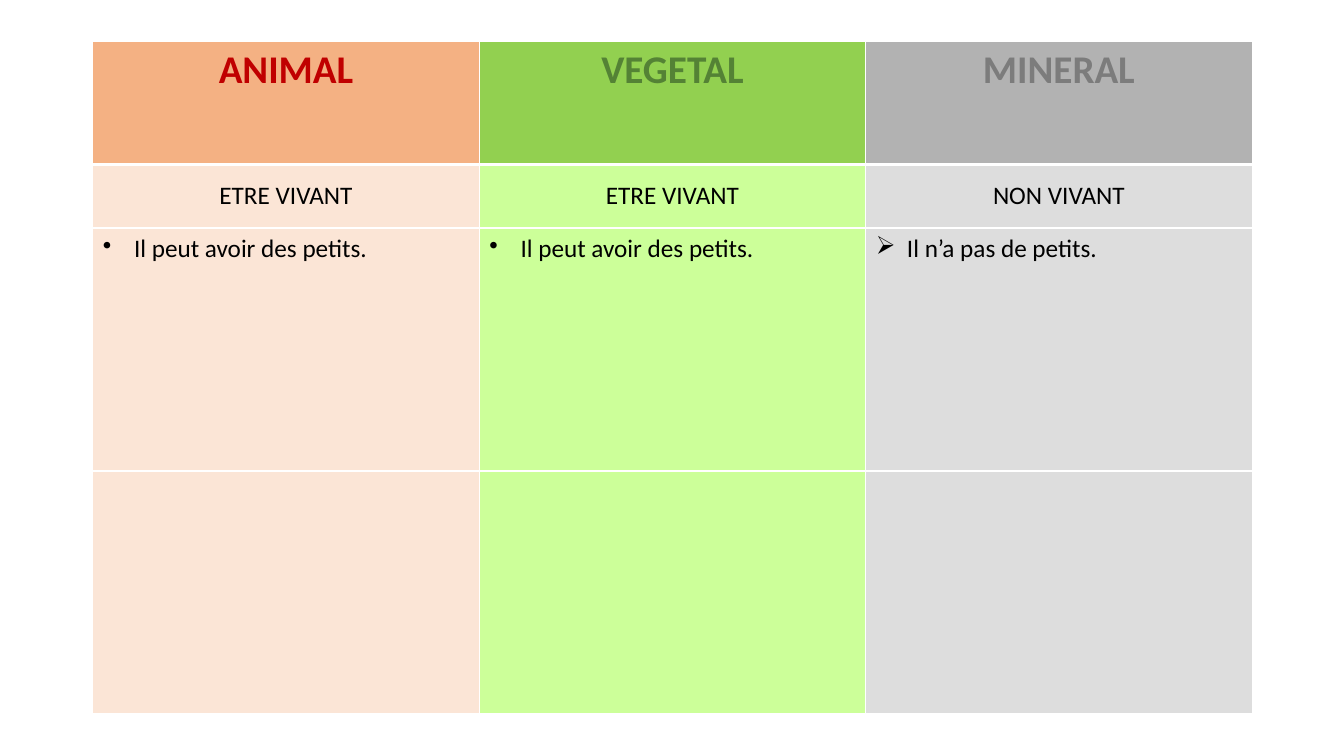
from lxml import etree
from pptx import Presentation
from pptx.dml.color import RGBColor
from pptx.enum.text import MSO_ANCHOR, PP_ALIGN
from pptx.oxml.ns import qn
from pptx.util import Emu, Inches, Pt

CENTER, LEFT = PP_ALIGN.CENTER, PP_ALIGN.LEFT
TOP, MIDDLE = MSO_ANCHOR.TOP, MSO_ANCHOR.MIDDLE

COLORS = {
    "border": "FFFFFF", "text": "000000",
    "animal": "C00000", "animal_head": "F4B183", "animal_body": "FBE5D6",
    "vegetal": "548235", "vegetal_head": "92D050", "vegetal_body": "CCFF99",
    "mineral": "7C7C7C", "mineral_head": "B2B2B2", "mineral_body": "DDDDDD",
}

# Kingdom, heading, status, bullet, statement
KINGDOMS = [
    ("animal", "ANIMAL", "ETRE VIVANT", "•", "Il peut avoir des petits."),
    ("vegetal", "VEGETAL", "ETRE VIVANT", "•", "Il peut avoir des petits."),
    ("mineral", "MINERAL", "NON VIVANT", "➢", "Il n’a pas de petits."),
]
ROW_HEIGHTS = [1.22, 0.63, 2.41, 2.41]


class SlideBuilder:
    font = "Calibri"
    body_size = 18
    heading_size = 28
    bullet_indent = Inches(0.31)

    def __init__(self, presentation):
        self.width = presentation.slide_width
        self.height = presentation.slide_height
        self.slide = presentation.slides.add_slide(presentation.slide_layouts[6])

    def table(self, left, top, width, row_heights, column_count):
        """Place a table; left, top and width are shares of the slide."""
        shape = self.slide.shapes.add_table(
            len(row_heights), column_count,
            Emu(int(left * self.width)), Emu(int(top * self.height)),
            Emu(int(width * self.width)), Inches(sum(row_heights)))
        for row, height in zip(shape.table.rows, row_heights):
            row.height = Inches(height)
        return shape.table

    def cell(self, cell, fill, text="", color="text", size=body_size,
             bold=False, alignment=LEFT, anchor=TOP, bullet=None):
        cell.fill.solid()
        cell.fill.fore_color.rgb = RGBColor.from_string(COLORS[fill])
        cell.vertical_anchor = anchor
        cell.text_frame.text = text
        paragraph = cell.text_frame.paragraphs[0]
        paragraph.alignment = alignment
        for run in paragraph.runs:
            run.font.name = self.font
            run.font.size = Pt(size)
            run.font.bold = bold
            run.font.color.rgb = RGBColor.from_string(COLORS[color])
        if bullet:
            self.bullet(paragraph, bullet)

    def bullet(self, paragraph, character):
        properties = paragraph._p.get_or_add_pPr()
        properties.set("marL", str(self.bullet_indent))
        properties.set("indent", str(-self.bullet_indent))
        etree.SubElement(properties, qn("a:buChar"), char=character)

    def borders(self, cell, top=1, bottom=1):
        """Draw the four edges, which must precede the fill in the XML."""
        properties = cell._tc.get_or_add_tcPr()
        edges = {"a:lnL": 1, "a:lnR": 1, "a:lnT": top, "a:lnB": bottom}
        for position, (tag, points) in enumerate(edges.items()):
            line = etree.Element(qn(tag), w=str(Pt(points)))
            solid = etree.SubElement(line, qn("a:solidFill"))
            etree.SubElement(solid, qn("a:srgbClr"), val=COLORS["border"])
            properties.insert(position, line)


def main():
    presentation = Presentation()
    presentation.slide_width = Inches(13.33)
    presentation.slide_height = Inches(7.5)
    builder = SlideBuilder(presentation)

    # Table frame
    table = builder.table(0.069, 0.055, 0.8627, ROW_HEIGHTS, len(KINGDOMS))

    # One column per kingdom
    for column, (kingdom, heading, status, bullet, statement) in enumerate(KINGDOMS):
        head, state, facts, spare = (
            table.cell(row, column) for row in range(len(ROW_HEIGHTS)))
        body = f"{kingdom}_body"
        builder.cell(head, f"{kingdom}_head", heading, color=kingdom,
                     size=builder.heading_size, bold=True, alignment=CENTER)
        builder.cell(state, body, status, alignment=CENTER, anchor=MIDDLE)
        builder.cell(facts, body, statement, bullet=bullet)
        builder.cell(spare, body)

        # Thick rule under the heading, thin ones elsewhere
        builder.borders(head, bottom=3)
        builder.borders(state, top=3)
        builder.borders(facts)
        builder.borders(spare)

    presentation.save("out.pptx")


if __name__ == "__main__":
    main()
